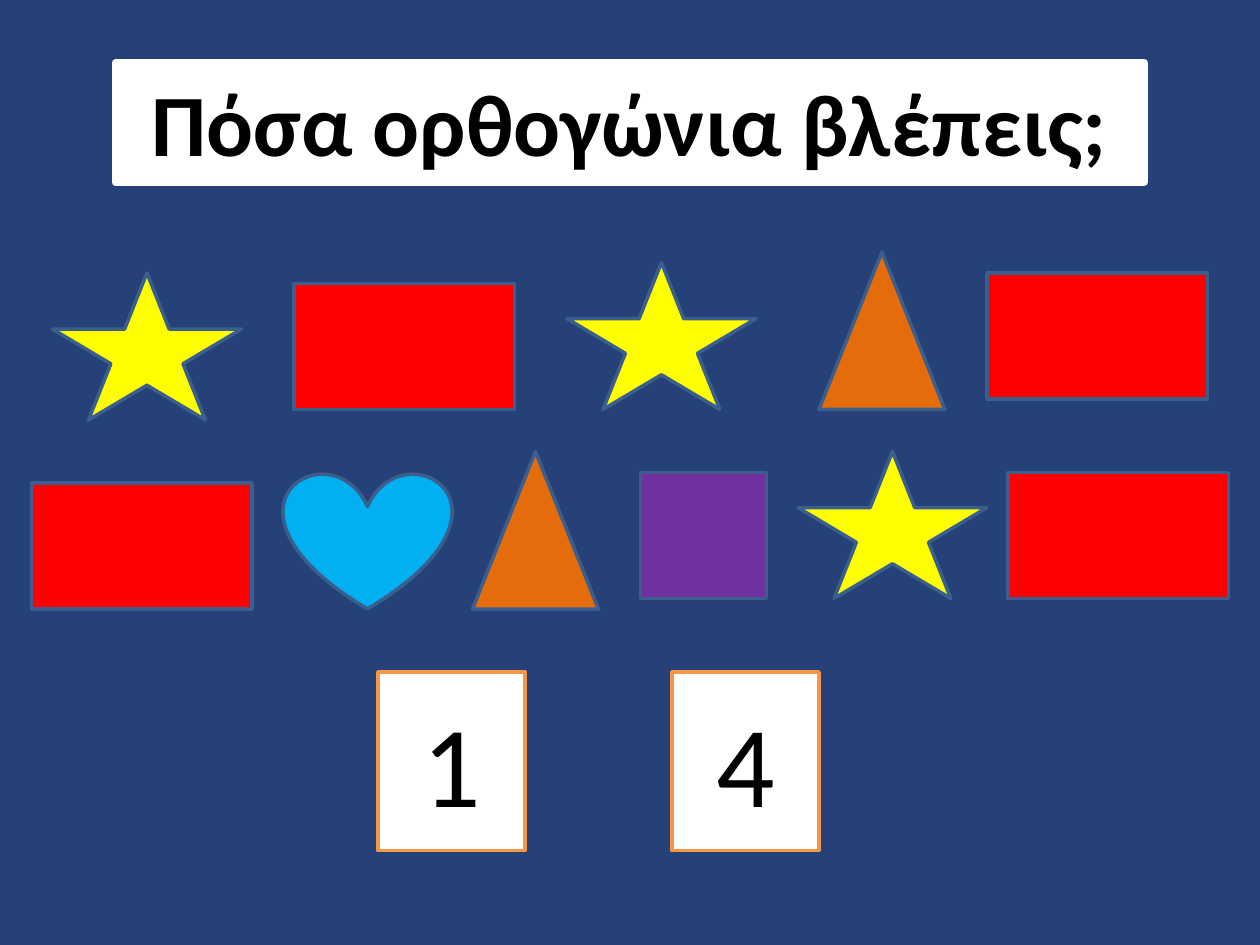
from pptx import Presentation
from pptx.dml.color import RGBColor
from pptx.enum import shapes, text
from pptx.util import Pt

NAVY = RGBColor(0x26, 0x40, 0x78)
OUTLINE = RGBColor(0x3A, 0x5F, 0x8C)
YELLOW = RGBColor(0xFF, 0xFF, 0x00)
ORANGE = RGBColor(0xE4, 0x6C, 0x0A)
PURPLE = RGBColor(0x70, 0x30, 0xA0)
BLUE = RGBColor(0x00, 0xB0, 0xF0)
RED = RGBColor(0xFF, 0x00, 0x00)
WHITE = RGBColor(0xFF, 0xFF, 0xFF)
BLACK = RGBColor(0x00, 0x00, 0x00)
CARD_EDGE = RGBColor(0xF7, 0x96, 0x46)

KINDS = {
    "star": (shapes.MSO_SHAPE.STAR_5_POINT, 108, 84, YELLOW),
    "triangle": (shapes.MSO_SHAPE.ISOSCELES_TRIANGLE, 72, 90, ORANGE),
    "square": (shapes.MSO_SHAPE.RECTANGLE, 72, 72, PURPLE),
    "heart": (shapes.MSO_SHAPE.HEART, 96, 78, BLUE),
    "rectangle": (shapes.MSO_SHAPE.RECTANGLE, 126, 72, RED),
}
FIGURES = [
    ("star", 30, 156), ("rectangle", 168, 162), ("star", 324, 150),
    ("triangle", 468, 144), ("rectangle", 564, 156),
    ("rectangle", 18, 276), ("heart", 162, 270), ("triangle", 270, 258),
    ("square", 366, 270), ("star", 456, 258), ("rectangle", 576, 270),
]

presentation = Presentation()
presentation.slide_width = Pt(720)
presentation.slide_height = Pt(540)
slide = presentation.slides.add_slide(presentation.slide_layouts[6])
slide.background.fill.solid()
slide.background.fill.fore_color.rgb = NAVY


def add_figure(preset, left, top, width, height, fill, line, weight=2):
    shape = slide.shapes.add_shape(preset, Pt(left), Pt(top), Pt(width), Pt(height))
    shape.shadow.inherit = False
    shape.fill.solid()
    shape.fill.fore_color.rgb = fill
    shape.line.color.rgb = line
    shape.line.width = Pt(weight)
    return shape


def write(shape, words, size, anchor, bold=False):
    frame = shape.text_frame
    frame.text = words
    frame.word_wrap = True
    frame.vertical_anchor = anchor
    paragraph = frame.paragraphs[0]
    paragraph.alignment = text.PP_ALIGN.CENTER
    font = paragraph.runs[0].font
    font.name = "Calibri"
    font.size = Pt(size)
    font.bold = bold
    font.color.rgb = BLACK


title = add_figure(shapes.MSO_SHAPE.RECTANGLE, 66, 36, 588, 68, WHITE, WHITE, 4.5)
write(title, "Πόσα ορθογώνια βλέπεις;", 50, text.MSO_ANCHOR.TOP, bold=True)

for kind, left, top in FIGURES:
    preset, width, height, fill = KINDS[kind]
    add_figure(preset, left, top, width, height, fill, OUTLINE)

for answer, left in (("1", 216), ("4", 384)):
    card = add_figure(shapes.MSO_SHAPE.RECTANGLE, left, 384, 84, 102, WHITE, CARD_EDGE)
    write(card, answer, 66, text.MSO_ANCHOR.MIDDLE)

presentation.save("out.pptx")
